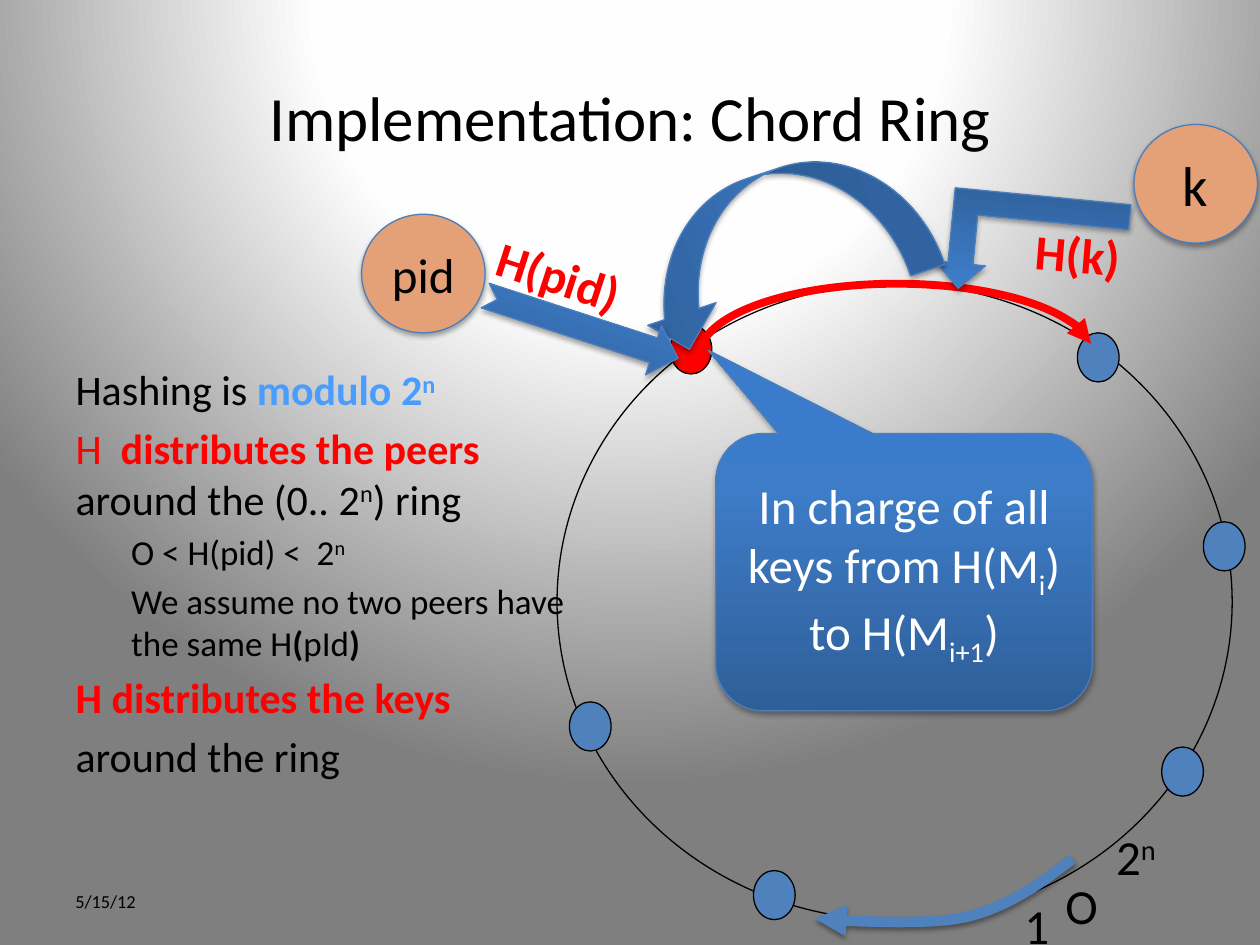
from collections import namedtuple

from pptx import Presentation
from pptx.dml.color import RGBColor
from pptx.enum.shapes import MSO_SHAPE
from pptx.enum.text import MSO_ANCHOR, MSO_AUTO_SIZE, PP_ALIGN
from pptx.oxml import parse_xml
from pptx.oxml.ns import qn
from pptx.util import Cm, Pt

Box = namedtuple("Box", "left top width height")
NS = ('xmlns:a="http://schemas.openxmlformats.org/drawingml/2006/main" '
      'xmlns:p="http://schemas.openxmlformats.org/presentationml/2006/main"')
BLACK, RED, WHITE = "000000", "FF0000", "FFFFFF"
BLUE, EDGE, PEACH, LIGHT_BLUE = "4F81BD", "4B7EBC", "E4A076", "489DFF"
GLOSS = [(0, "2F5F99"), (80, "3D7CC7"), (100, "3A7CCB")]
UP, DOWN = {"baseline": 30}, {"baseline": -25}
BOLD, BOLD_RED = {"bold": True}, {"bold": True, "color": RED}


def color(value):
    return RGBColor.from_string(value)


def inside(box, left, top, width, height):
    """Box given by its offset from the corner of another box."""
    return Box(box.left + left, box.top + top, width, height)


def place(item, box):
    for name, value in box._asdict().items():
        setattr(item, name, Cm(value))


def gradient_xml(stops, direction):
    marks = "".join(f'<a:gs pos="{at * 1000}"><a:srgbClr val="{value}"/></a:gs>'
                    for at, value in stops)
    return f'<a:gradFill {NS} rotWithShape="1"><a:gsLst>{marks}</a:gsLst>{direction}</a:gradFill>'


def add_shadow(shape, alpha=35, distance=1.8):
    shape._element.spPr.find(qn("a:effectLst")).append(parse_xml(
        f'<a:outerShdw {NS} blurRad="{Pt(3.1)}" dist="{Pt(distance)}" dir="5400000" '
        f'rotWithShape="0"><a:srgbClr val="{BLACK}"><a:alpha val="{alpha * 1000}"/>'
        '</a:srgbClr></a:outerShdw>'))


def write_spans(para, spans, size, **base):
    """Add (text, format) spans to a paragraph over a shared base format."""
    for text, extra in spans:
        span = para.add_run()
        span.text = text
        look = {"size": size, "color": BLACK, "bold": False, **base, **extra}
        for name, value in {"name": "Calibri", "size": Pt(look["size"]),
                            "bold": look["bold"]}.items():
            setattr(span.font, name, value)
        span.font.color.rgb = color(look["color"])
        if "baseline" in look:
            span.font._element.set("baseline", str(look["baseline"] * 1000))


def add_shape(page, kind, box, fill=None, line=EDGE, width=0.75, shadow=True):
    shape = page.shapes.add_shape(kind, *map(Cm, box))
    shape.shadow.inherit = False
    if fill == GLOSS:
        shape.fill.background()
        old = shape._element.spPr.find(qn("a:noFill"))
        old.getparent().replace(old, parse_xml(
            gradient_xml(GLOSS, '<a:lin ang="16200000" scaled="0"/>')))
    elif fill:
        shape.fill.solid()
        shape.fill.fore_color.rgb = color(fill)
    else:
        shape.fill.background()
    shape.line.color.rgb = color(line)
    shape.line.width = Pt(width)
    if shadow:
        add_shadow(shape)
    return shape


def center_text(shape, spans, size, text_color=BLACK):
    shape.text_frame.vertical_anchor = MSO_ANCHOR.MIDDLE
    para = shape.text_frame.paragraphs[0]
    para.alignment = PP_ALIGN.CENTER
    write_spans(para, spans, size, color=text_color)


def add_label(page, box, spans, size=28, rotation=0, **look):
    label = page.shapes.add_textbox(*map(Cm, box))
    label.rotation = rotation
    label.text_frame.word_wrap = False
    write_spans(label.text_frame.paragraphs[0], spans, size, **look)
    return label


def add_arrowhead(shape, end):
    shape.line._get_or_add_ln().append(parse_xml(f'<a:{end} {NS} type="triangle"/>'))


def set_background(page):
    fill = gradient_xml(
        [(0, WHITE), (40, "FEFEFE"), (100, "7F7F7F")],
        '<a:path path="circle"><a:fillToRect l="50000" t="-80000" r="50000" b="180000"/></a:path>')
    page._element.cSld.insert(0, parse_xml(
        f'<p:bg {NS}><p:bgPr>{fill}<a:effectLst/></p:bgPr></p:bg>'))


def fill_title(page, box, text):
    title = page.shapes.title
    place(title, box)
    center_text(title, [(text, {})], 36)


def fill_body(page, box, items):
    """Place (level, size, spans) items in the body placeholder, without bullets."""
    body = page.placeholders[1]
    place(body, box)
    frame = body.text_frame
    frame.auto_size = MSO_AUTO_SIZE.NONE
    for index, (level, size, spans) in enumerate(items):
        para = frame.add_paragraph() if index else frame.paragraphs[0]
        para.level = level
        para.space_before = Pt(size * 0.2 if index else 0)
        properties = para._p.get_or_add_pPr()
        properties.set("marL", str(Cm(1.12 * level)))
        properties.set("indent", "0")
        properties.append(parse_xml(f'<a:buNone {NS}/>'))
        write_spans(para, spans, size)


def curve_points(start, control_1, control_2, end, steps=16):
    """Points along a cubic curve, after its start."""
    for step in range(1, steps + 1):
        t = step / steps
        weights = ((1 - t) ** 3, 3 * t * (1 - t) ** 2, 3 * t * t * (1 - t), t ** 3)
        yield tuple(sum(w * point[axis] for w, point in
                        zip(weights, (start, control_1, control_2, end))) for axis in (0, 1))


def add_direction_arrow(page, box):
    start, middle, end = (10.39, 11.6), (8.23, 12.77), (5.2, 12.8)
    points = [start, *curve_points(start, (9.75, 12.09), (9.09, 12.57), middle),
              *curve_points(middle, (7.36, 12.97), end, end)]
    points = [(Cm(box.left + x), Cm(box.top + y)) for x, y in points]
    builder = page.shapes.build_freeform(*points[0])
    builder.add_line_segments(points[1:], close=False)
    arrow = builder.convert_to_shape()
    arrow.shadow.inherit = False
    arrow.fill.background()
    arrow.line.color.rgb = color(BLUE)
    arrow.line.width = Pt(6)
    add_arrowhead(arrow, "tailEnd")
    add_shadow(arrow, 38, 1.6)


def add_ring(page, box):
    add_shape(page, MSO_SHAPE.OVAL, box, line=BLACK, shadow=False)
    peers = [(10.49, 0.99, BLUE), (13.03, 4.8, BLUE), (12.19, 9.34, BLUE),
             (3.96, 11.83, BLUE), (0.25, 8.43, BLUE), (2.28, 0.83, RED)]
    for left, top, fill in peers:
        add_shape(page, MSO_SHAPE.OVAL, inside(box, left, top, 0.84, 0.99), fill, BLACK,
                  shadow=False)
    key_range = add_shape(page, MSO_SHAPE.ARC, inside(box, 2.87, 0, 7.95, 2.9),
                          line=RED, width=4.5, shadow=False)
    key_range.adjustments[0], key_range.adjustments[1] = 110.1, 215.16
    key_range._element.spPr.find(qn("a:xfrm")).set("flipH", "1")
    add_arrowhead(key_range, "headEnd")
    for left, top, width, spans in [(10, 11.81, 1.17, [("O", {})]),
                                    (9.17, 12.21, 1.02, [("1", {})]),
                                    (11.02, 10.82, 1.37, [("2", {}), ("n", UP)])]:
        add_label(page, inside(box, left, top, width, 1.45), spans)
    add_direction_arrow(page, box)


def add_callout(page, box):
    callout = add_shape(page, MSO_SHAPE.ROUNDED_RECTANGULAR_CALLOUT, box, GLOSS)
    for index, value in enumerate((-0.52, -0.8, 0.17)):
        callout.adjustments[index] = value
    center_text(callout, [("In charge of all keys from H(M", {}), ("i", DOWN),
                          (") to H(M", {}), ("i+1", DOWN), (")", {})], 28, WHITE)


def add_hash(page, box, name, size, circle, label, arrow_kind, arrow):
    """A hashed value, its arrow and its label; label and arrow are (offset box, rotation)."""
    disc = add_shape(page, MSO_SHAPE.OVAL, inside(box, *circle, 2.49, 2.39), PEACH)
    disc.text_frame.word_wrap = False
    center_text(disc, [(name, {})], size)
    add_shape(page, arrow_kind, inside(box, *arrow[0]), GLOSS).rotation = arrow[1]
    add_label(page, inside(box, *label[0]), [(f"H({name})", BOLD_RED)], rotation=label[1])


def main():
    deck = Presentation()
    deck.slide_width, deck.slide_height = Cm(25.4), Cm(19.05)
    page = deck.slides.add_slide(deck.slide_layouts[1])
    set_background(page)
    fill_title(page, Box(1.27, 0.76, 22.86, 3.18), "Implementation: Chord Ring")
    fill_body(page, Box(1.27, 7.21, 11.23, 9.8), [
        (0, 24, [("Hashing is ", {}), ("modulo 2", {"bold": True, "color": LIGHT_BLUE}),
                 ("n", {"bold": True, "color": LIGHT_BLUE, **UP})]),
        (0, 24, [("H  ", {"color": RED}), ("distributes the peers ", BOLD_RED),
                 ("around the (0.. 2", {}), ("n", UP), (") ring", {})]),
        (1, 20, [("O < H(pid) <  2", {}), ("n", UP)]),
        (1, 20, [("We assume no two peers have the same H", {}), ("(", BOLD),
                 ("pId", {}), (")", BOLD)]),
        (0, 24, [("H distributes the keys", BOLD_RED)]),
        (0, 24, [("around the ring", {})])])
    date = add_label(page, Box(1.27, 17.65, 5.92, 1.02), [("5/15/12", {})], 10.5)
    date.text_frame.word_wrap = True
    date.text_frame.vertical_anchor = MSO_ANCHOR.MIDDLE
    add_ring(page, Box(11.23, 5.72, 13.61, 12.83))
    add_callout(page, Box(14.43, 8.74, 7.59, 5.59))
    add_hash(page, Box(18.9, 2.51, 6.45, 3.44), "k", 32, (3.96, 0),
             ((1.72, 1.88, 2.24, 1.45), 4.6),
             MSO_SHAPE.BENT_UP_ARROW, ((0, 1.43, 3.81, 2.01), 185.5))
    successor = add_shape(page, MSO_SHAPE.CURVED_RIGHT_ARROW, Box(14.22, 1.85, 2.9, 6.15), GLOSS)
    successor.rotation = 71.6
    add_hash(page, Box(7.29, 4.32, 6.48, 2.79), "pid", 28, (0, 0),
             ((2.46, 0.51, 3.07, 1.45), 17.9),
             MSO_SHAPE.NOTCHED_RIGHT_ARROW, ((2.39, 1.75, 4.09, 1.04), 18))
    deck.save("out.pptx")


if __name__ == "__main__":
    main()
